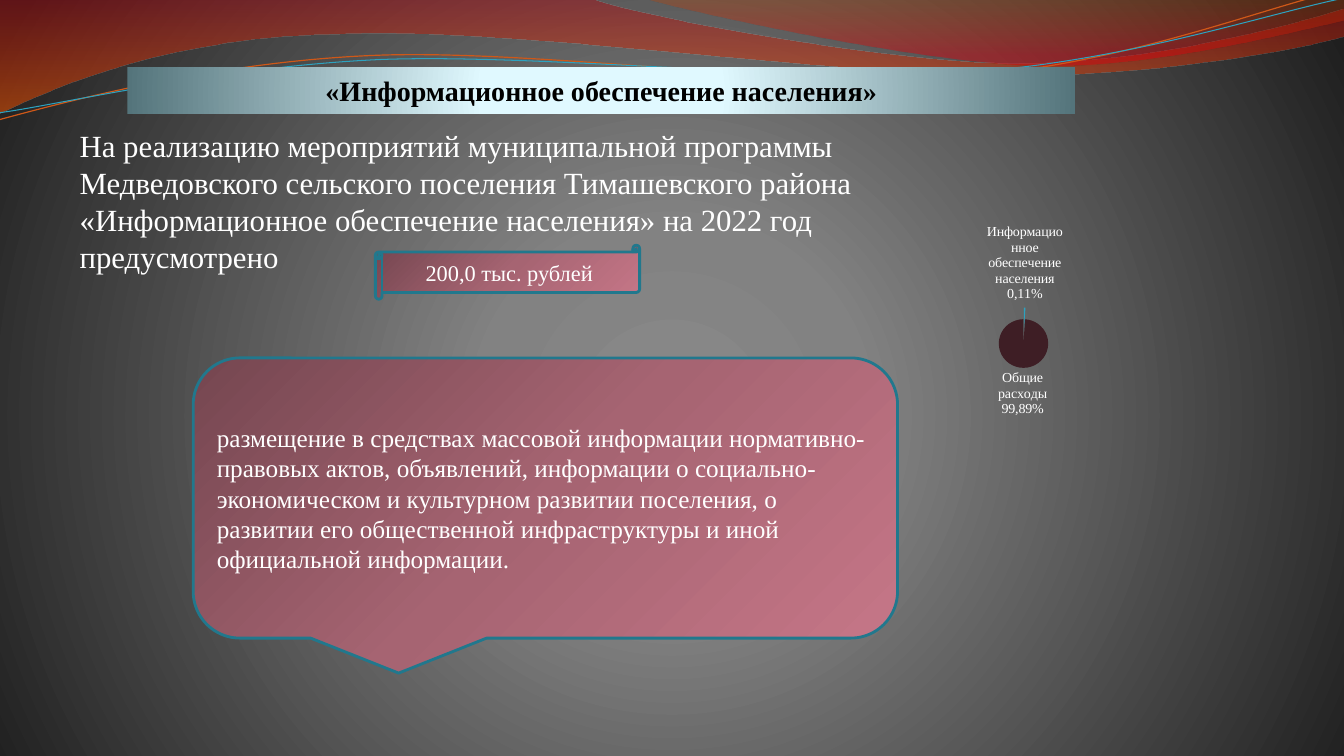
from lxml.etree import SubElement
from pptx import Presentation
from pptx.chart.data import CategoryChartData
from pptx.dml.color import RGBColor
from pptx.enum.chart import XL_CHART_TYPE, XL_LABEL_POSITION
from pptx.enum.shapes import MSO_SHAPE
from pptx.enum.text import MSO_ANCHOR, PP_ALIGN
from pptx.oxml import parse_xml
from pptx.oxml.ns import nsdecls, qn
from pptx.util import Cm, Pt

COLORS = {
    "text": "FFFFFF", "title": "000000", "border": "21788D",
    "back_light": "898989", "back_mid": "828282", "back_dark": "1F1F1F",
    "title_light": "E1FAFF", "title_mid": "E0F9FF", "title_dark": "54747B",
    "rose_dark": "754650", "rose_mid": "A66472", "rose_light": "C57687",
    "red": "AF0911", "orange": "EE5300", "rust": "C24400", "scarlet": "DC000B",
    "orange_line": "CF5818", "teal": "2DA2BF", "maroon": "3E1E25",
}
RGB = {name: RGBColor.from_string(value) for name, value in COLORS.items()}
FONT = "Times New Roman"
ROSE = [(0, "rose_dark", 100), (50, "rose_mid", 100), (100, "rose_light", 100)]


def set_gradient(fill, element, stops, angle=None):
    fill.gradient()
    grad = next(element.iter(qn("a:gradFill")))
    grad.clear()
    grad.set("rotWithShape", "1")
    stop_list = SubElement(grad, qn("a:gsLst"))
    for position, color, opacity in stops:
        stop = SubElement(stop_list, qn("a:gs"), pos=str(position * 1000))
        clr = SubElement(stop, qn("a:srgbClr"), val=COLORS[color])
        if opacity < 100:
            SubElement(clr, qn("a:alpha"), val=str(opacity * 1000))
    if angle is None:
        circle = SubElement(grad, qn("a:path"))
        circle.set("path", "circle")
        SubElement(circle, qn("a:fillToRect"), l="10000", t="110000", r="10000", b="100000")
    else:
        SubElement(grad, qn("a:lin"), ang=str(angle * 60000), scaled="0")


def add_wave(shapes, start, segments, close):
    points = [(Cm(seg[i]), Cm(seg[i + 1])) for seg in segments for i in range(0, len(seg), 2)]
    builder = shapes.build_freeform(Cm(start[0]), Cm(start[1]))
    builder.add_line_segments(points, close=close)
    wave = builder.convert_to_shape()
    wave.shadow.inherit = False
    steps = iter(list(wave._element.iter(qn("a:lnTo"))))
    for seg in segments:
        first = next(steps)
        if len(seg) == 6:
            first.tag = qn("a:cubicBezTo")
            for extra in (next(steps), next(steps)):
                first.append(extra[0])
                extra.getparent().remove(extra)
    return wave


prs = Presentation()
prs.slide_width, prs.slide_height = Cm(33.87), Cm(19.05)
s = prs.slides.add_slide(prs.slide_layouts[6])
set_gradient(s.background.fill, s._element,
             [(0, "back_light", 100), (25, "back_mid", 100), (100, "back_dark", 100)])

bands = [
    ((0, 0), [(14.9, -0.03), (16.1, 0.43, 22.48, 1.6, 25.68, 1.6),
              (28.91, 1.6, 32.46, 0.66, 33.86, 0.23), (33.91, 0.91),
              (33.3, 1.12, 29.46, 1.93, 25.25, 1.91),
              (21.06, 1.91, 12.93, 0.71, 8.71, 0.86),
              (4.37, 0.91, 1.55, 2.11, -0.03, 2.87)],
     [(0, "red", 45), (100, "orange", 55)]),
    ((16.23, -0.03), [(17.25, 0.28, 23.09, 1.57, 26.04, 1.65),
                      (28.98, 1.75, 32.56, 0.81, 33.86, 0.53), (33.86, 0)],
     [(0, "rust", 30), (80, "scarlet", 45)]),
]
for start, segments, stops in bands:
    band = add_wave(s.shapes, start, segments, True)
    set_gradient(band.fill, band._element, stops, 90)
    band.line.fill.background()

threads = [
    ((-0.03, 3.02), [(1.63, 2.57, 5.36, 1.57, 9.37, 1.4),
                     (13.39, 1.22, 20.07, 2.21, 24.13, 1.93),
                     (28.19, 1.68, 31.8, 0.2, 33.81, -0.25)], "orange_line", 0.85),
    ((0, 2.84), [(1.6, 2.62, 5.54, 1.68, 9.6, 1.5),
                 (13.64, 1.35, 20.22, 2.08, 24.26, 1.83),
                 (28.32, 1.57, 31.88, 0.36, 33.88, -0.05)], "teal", 0.75),
]
for start, segments, color, width in threads:
    thread = add_wave(s.shapes, start, segments, False)
    thread.fill.background()
    thread.line.color.rgb = RGB[color]
    thread.line.width = Pt(width)

body = s.shapes.add_textbox(Cm(1.88), Cm(3.07), Cm(23.88), Cm(4.06))
tf = body.text_frame
tf.word_wrap = True
tf.margin_left = tf.margin_right = tf.margin_top = tf.margin_bottom = Cm(0.13)
p = tf.paragraphs[0]
p.text = ("На реализацию мероприятий муниципальной программы Медведовского сельского "
          "поселения Тимашевского района «Информационное обеспечение населения» "
          "на 2022 год предусмотрено")
p.font.name, p.font.size, p.font.color.rgb = FONT, Pt(22), RGB["text"]
p.space_before = Pt(4.4)

data = CategoryChartData()
data.categories = ["1", "2"]
data.add_series("Series 1", (1, 99))
chart = s.shapes.add_chart(XL_CHART_TYPE.PIE, Cm(20.7), Cm(5.26), Cm(10.3), Cm(5.33), data).chart
chart.has_legend = chart.has_title = False
chart.font.name, chart.font.size, chart.font.color.rgb = "Cambria", Pt(10), RGB["text"]
plot = chart.plots[0]
plot.vary_by_categories = True
plot.has_data_labels = True
labels = plot.data_labels
labels.show_percentage = labels.show_category_name = True
labels.show_value = False
labels.number_format, labels.number_format_is_linked = "0.00", False
labels.position = XL_LABEL_POSITION.OUTSIDE_END
labels.font.name, labels.font.size, labels.font.color.rgb = FONT, Pt(10), RGB["text"]
series = plot.series[0]
series._element.get_or_add_spPr().addnext(
    parse_xml(f'<c:explosion {nsdecls("c")} val="24"/>'))
slices = [("teal", "Информационное обеспечение населения\n0,11%"),
          ("maroon", "Общие расходы\n99,89%")]
for i, (color, caption) in enumerate(slices):
    point = series.points[i]
    point.format.fill.solid()
    point.format.fill.fore_color.rgb = RGB[color]
    point.format.line.fill.background()
    label = point.data_label
    label.text_frame.text = caption
    label.position = XL_LABEL_POSITION.OUTSIDE_END
    for p in label.text_frame.paragraphs:
        f = p.runs[0].font
        f.name, f.size, f.color.rgb = FONT, Pt(10), RGB["text"]
plot_area = chart._chartSpace.chart.plotArea
for old in plot_area.findall(qn("c:layout")):
    plot_area.remove(old)
plot_area.insert(0, parse_xml(
    f'<c:layout {nsdecls("c")}><c:manualLayout><c:layoutTarget val="inner"/>'
    '<c:xMode val="edge"/><c:yMode val="edge"/><c:x val="0.42"/><c:y val="0.47"/>'
    '<c:w val="0.15"/><c:h val="0.3"/></c:manualLayout></c:layout>'))

panels = [
    (MSO_SHAPE.RECTANGLE, (3.21, 1.7, 23.89, 1.17), "«Информационное обеспечение населения»",
     20, "title", PP_ALIGN.CENTER,
     [(0, "title_light", 100), (25, "title_mid", 100), (100, "title_dark", 100)], None),
    (MSO_SHAPE.HORIZONTAL_SCROLL, (9.46, 6.18, 6.66, 1.36), "200,0 тыс. рублей",
     16, "text", PP_ALIGN.CENTER, ROSE, 45),
    (MSO_SHAPE.ROUNDED_RECTANGULAR_CALLOUT, (4.87, 9.02, 17.75, 7.06),
     "размещение в средствах массовой информации нормативно-правовых актов, объявлений, "
     "информации о социально-экономическом и культурном развитии поселения, о развитии его "
     "общественной инфраструктуры и иной официальной информации.",
     18, "text", PP_ALIGN.LEFT, ROSE, 45),
]
for kind, box, text, size, color, align, stops, angle in panels:
    sp = s.shapes.add_shape(kind, *[Cm(v) for v in box])
    sp.shadow.inherit = False
    set_gradient(sp.fill, sp._element, stops, angle)
    tf = sp.text_frame
    tf.word_wrap = True
    tf.vertical_anchor = MSO_ANCHOR.MIDDLE
    p = tf.paragraphs[0]
    p.text, p.alignment = text, align
    p.font.name, p.font.size, p.font.color.rgb = FONT, Pt(size), RGB[color]
    if color == "title":
        sp.line.fill.background()
        p.font.bold = True
        tf.margin_left = tf.margin_right = tf.margin_top = tf.margin_bottom = 0
    else:
        sp.line.color.rgb = RGB["border"]
        sp.line.width = Pt(2)

prs.save("out.pptx")
